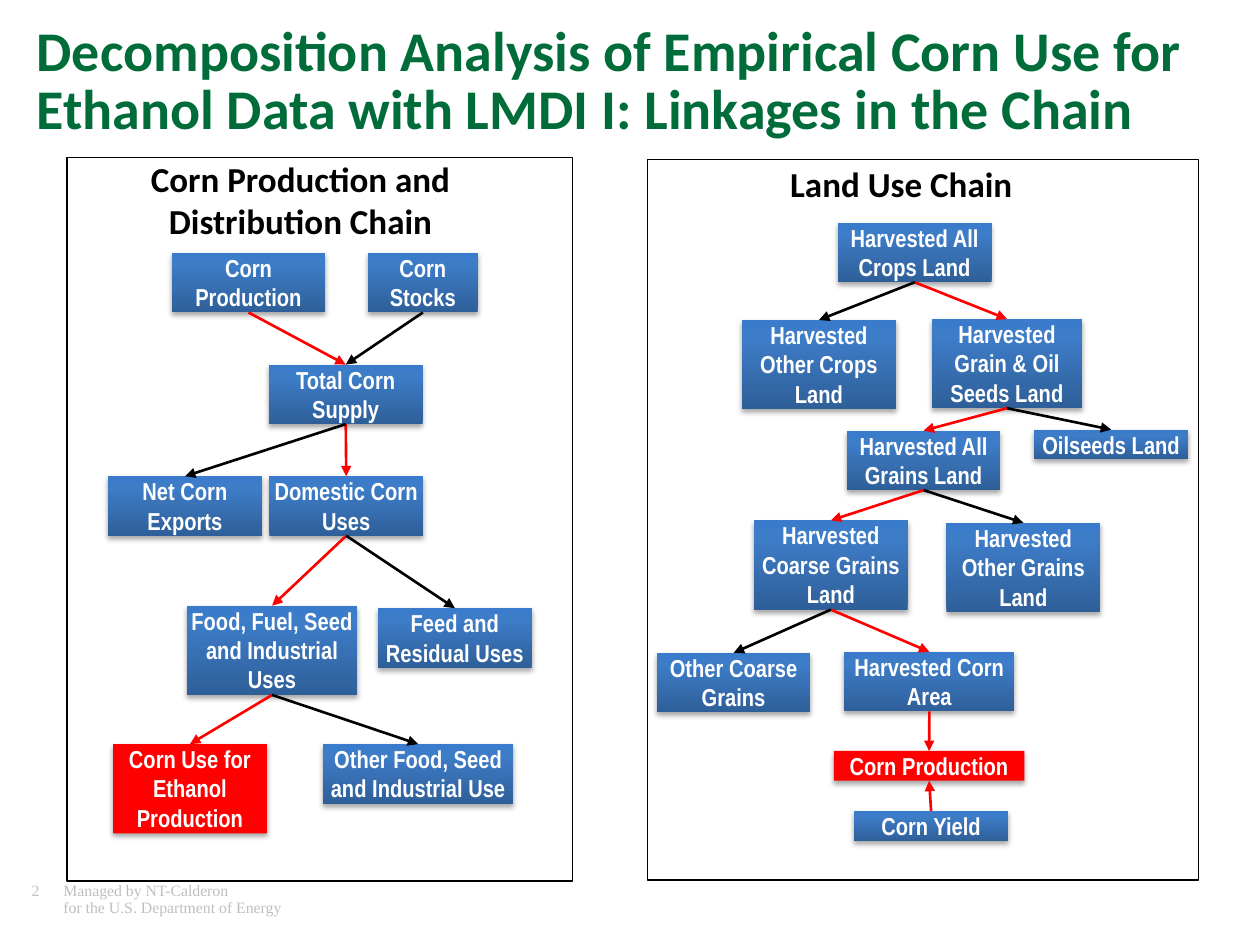
from copy import deepcopy
from lxml.etree import SubElement
from pptx import Presentation
from pptx.dml.color import RGBColor
from pptx.enum.shapes import MSO_CONNECTOR as Connector, MSO_SHAPE as Shape
from pptx.enum.text import MSO_ANCHOR as Anchor, MSO_AUTO_SIZE as AutoSize, PP_ALIGN as Align
from pptx.oxml.ns import qn
from pptx.util import Cm, Pt

GREEN = RGBColor(0x00, 0x6C, 0x3A)
BLACK = RGBColor(0x00, 0x00, 0x00)
WHITE = RGBColor(0xFF, 0xFF, 0xFF)
RED = RGBColor(0xFF, 0x00, 0x00)
GREY = RGBColor(0xBF, 0xBF, 0xBF)
BLUES = [
    (0, RGBColor(0x2F, 0x5F, 0x99)),
    (0.8, RGBColor(0x3D, 0x7C, 0xC7)),
    (1, RGBColor(0x3A, 0x7C, 0xCB)),
]
LINE_HEIGHT = 0.6

CHAINS = [
    {
        "heading": ("Corn Production and Distribution Chain", 3, 3.18, 1.7),
        "panel": (1.35, 3.17, 10.19, 14.59),
        "steps": {
            "production": ("Corn Production", 3.46, 5.1, 3.1, 2),
            "stocks": ("Corn Stocks", 7.42, 5.1, 2.21, 2),
            "supply": ("Total Corn Supply", 5.42, 7.35, 3.1, 2),
            "domestic": ("Domestic Corn Uses", 5.43, 9.6, 3.1, 2),
            "exports": ("Net Corn Exports", 2.18, 9.6, 3.1, 2),
            "food": ("Food, Fuel, Seed and Industrial Uses", 3.77, 12.21, 3.43, 3),
            "feed": ("Feed and Residual Uses", 7.62, 12.26, 3.1, 2),
            "target": ("Corn Use for Ethanol Production", 2.28, 15, 3.1, 3),
            "other": ("Other Food, Seed and Industrial Use", 6.51, 15, 3.84, 2),
        },
        "main links": ["production supply", "supply domestic", "domestic food", "food target"],
        "side links": ["stocks supply", "supply exports", "domestic feed", "food other"],
    },
    {
        "heading": ("Land Use Chain", 15.11, 3.28, 0.86),
        "panel": (13.05, 3.21, 11.11, 14.53),
        "steps": {
            "crops": ("Harvested All Crops Land", 16.89, 4.49, 3.1, 2),
            "other crops": ("Harvested Other Crops Land", 14.96, 6.45, 3.1, 3),
            "oil": ("Harvested Grain & Oil Seeds Land", 18.79, 6.43, 3.02, 3),
            "grains": ("Harvested All Grains Land", 17.07, 8.68, 3.1, 2),
            "oilseeds": ("Oilseeds Land", 20.85, 8.66, 3.1, 1),
            "coarse": ("Harvested Coarse Grains Land", 15.2, 10.49, 3.1, 3),
            "other grains": ("Harvested Other Grains Land", 19.08, 10.54, 3.1, 3),
            "area": ("Harvested Corn Area", 17.02, 13.14, 3.43, 2),
            "other coarse": ("Other Coarse Grains", 13.24, 13.16, 3.1, 2),
            "target": ("Corn Production", 16.81, 15.14, 3.84, 1),
            "yield": ("Corn Yield", 17.22, 16.35, 3.1, 1),
        },
        "main links": ["crops oil", "oil grains", "grains coarse", "coarse area",
                       "area target", "yield target"],
        "side links": ["crops other crops", "oil oilseeds", "grains other grains",
                       "coarse other coarse"],
    },
]


def write(shape, text, size, font, color, bold=True, align=Align.LEFT, spacing=1):
    frame = shape.text_frame
    frame.margin_left = frame.margin_right = frame.margin_top = frame.margin_bottom = 0
    frame.word_wrap = True
    frame.vertical_anchor = Anchor.TOP
    frame.text = text
    paragraph = frame.paragraphs[0]
    paragraph.alignment = align
    paragraph.line_spacing = spacing
    for run in paragraph.runs:
        run.font.size = Pt(size)
        run.font.name = font
        run.font.bold = bold
        run.font.color.rgb = color
    return paragraph


presentation = Presentation()
presentation.slide_width = Cm(25.4)
presentation.slide_height = Cm(19.05)
slide = presentation.slides.add_slide(presentation.slide_layouts[6])
shapes = slide.shapes

footer = shapes.add_textbox(Cm(0.64), Cm(17.8), Cm(7.82), Cm(0.84))
footer_line = write(footer, "2\tManaged by NT-Calderon\v\tfor the U.S. Department of Energy",
                    9, "Times New Roman", GREY, bold=False, spacing=0.9)
tabs = SubElement(footer_line._p.get_or_add_pPr(), qn("a:tabLst"))
SubElement(tabs, qn("a:tab"), pos=str(Cm(0.64)), algn="l")

title = shapes.add_textbox(Cm(0.74), Cm(0.53), Cm(23.98), Cm(2.31))
write(title, "Decomposition Analysis of Empirical Corn Use for Ethanol Data with LMDI I: "
      "Linkages in the Chain", 32, "Calibri", GREEN, spacing=0.85)

for chain in CHAINS:
    panel = shapes.add_shape(Shape.RECTANGLE, *map(Cm, chain["panel"]))
    panel.shadow.inherit = False
    panel.fill.background()
    panel.line.color.rgb = BLACK
    panel.line.width = Pt(0.75)

    boxes = {}
    for step, (label, left, top, width, lines) in chain["steps"].items():
        box = shapes.add_shape(Shape.RECTANGLE, Cm(left), Cm(top), Cm(width),
                               Cm(lines * LINE_HEIGHT))
        boxes[step] = box
        box.line.fill.background()
        if step == "target":
            box.fill.solid()
            box.fill.fore_color.rgb = RED
        else:
            box.fill.gradient()
            box.fill.gradient_angle = 90
            stops = box._element.spPr.find(".//" + qn("a:gsLst"))
            stops.append(deepcopy(stops[-1]))
            for stop, (position, blue) in zip(box.fill.gradient_stops, BLUES):
                stop.position = position
                stop.color.rgb = blue
        box.shadow.inherit = False
        effects = box._element.spPr.find(qn("a:effectLst"))
        shadow = SubElement(effects, qn("a:outerShdw"), blurRad=str(Pt(3.1)),
                            dist=str(Pt(1.8)), dir="5400000", rotWithShape="0")
        shadow_color = SubElement(shadow, qn("a:srgbClr"), val=str(BLACK))
        SubElement(shadow_color, qn("a:alpha"), val="35000")
        write(box, label, 14, "Arial Narrow", WHITE, align=Align.CENTER)
        box.text_frame.auto_size = AutoSize.SHAPE_TO_FIT_TEXT

    for links, color in ((chain["main links"], RED), (chain["side links"], BLACK)):
        for link in links:
            source, target = (boxes[step] for step in link.split(" ", 1))
            source_site, target_site = (2, 0) if source.top < target.top else (0, 2)
            arrow = shapes.add_connector(Connector.STRAIGHT, 0, 0, 0, 0)
            arrow.begin_connect(source, source_site)
            arrow.end_connect(target, target_site)
            arrow.line.color.rgb = color
            arrow.line.width = Pt(1.5)
            SubElement(arrow.line._get_or_add_ln(), qn("a:tailEnd"), type="triangle")
            SubElement(arrow._element.spPr, qn("a:effectLst"))

    heading, left, top, height = chain["heading"]
    heading_box = shapes.add_textbox(Cm(left), Cm(top), Cm(6.12), Cm(height))
    write(heading_box, heading, 20, "Calibri", BLACK, align=Align.CENTER)

presentation.save("out.pptx")
